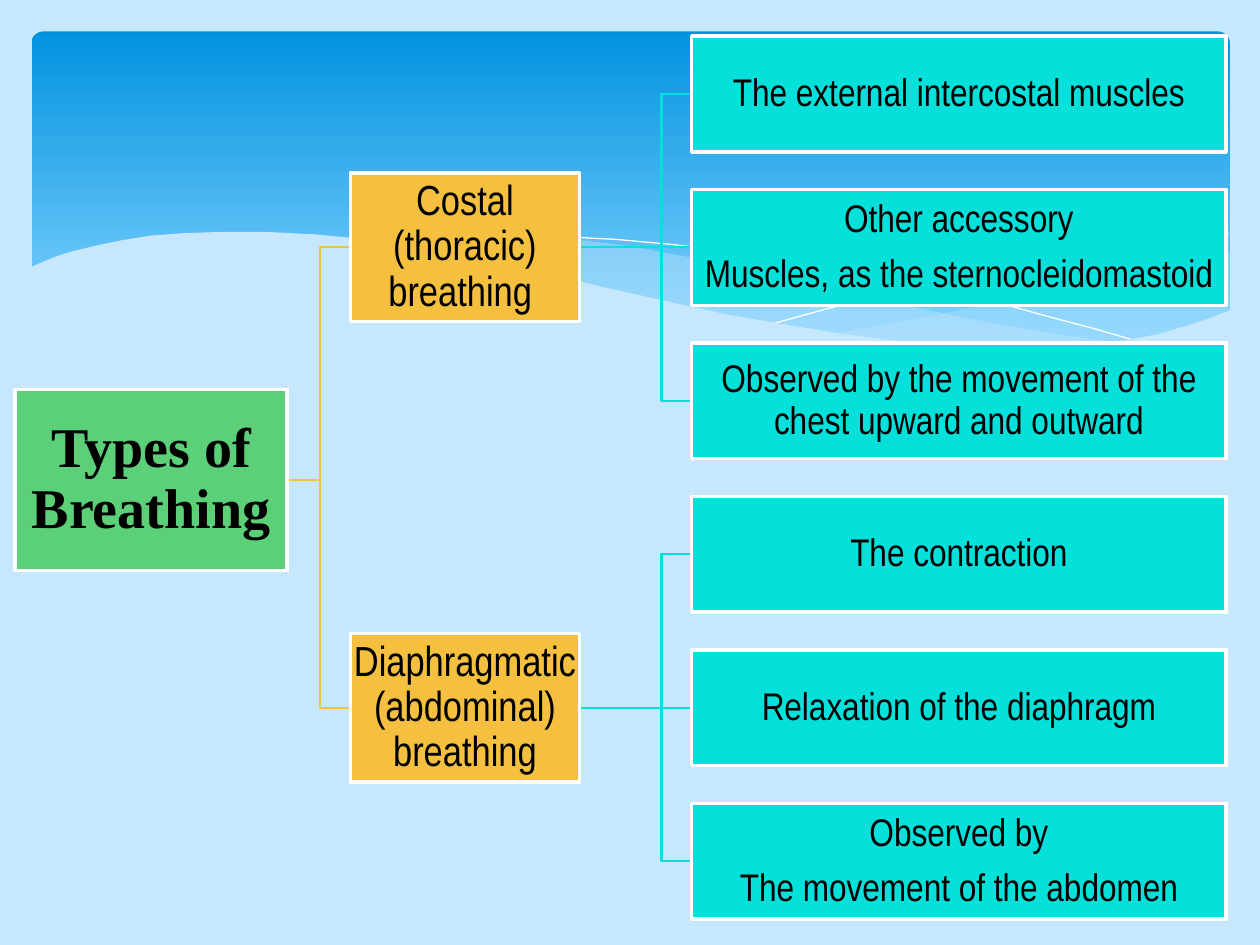
import pptx
import pptx.dml.color
import pptx.enum.dml
import pptx.enum.shapes
import pptx.enum.text
import pptx.oxml
import pptx.oxml.ns
import pptx.util
from pptx.util import Inches

COLORS = {
    "sky": "C6E7FC", "band_top": "0293E0", "band_bottom": "83D3FE",
    "root": "5BD078", "type": "F5C040", "detail": "05E0DB",
    "white": "FFFFFF", "text": "000000",
}

# Wave outlines, in hundredths of an inch
RIGHT_WAVE = [
    (975, 200), (948, 204), (921, 210), (891, 216), (861, 223), (805, 237),
    (753, 248), (706, 257), (661, 265), (691, 269), (719, 272), (745, 275),
    (769, 277), (792, 277), (814, 278), (835, 277), (854, 276), (872, 274),
    (889, 272), (905, 269), (921, 265), (935, 262), (949, 257), (963, 252),
    (976, 247), (976, 200),
]
MIDDLE_WAVE = [
    (893, 273), (866, 269), (837, 265), (807, 260), (775, 254), (741, 247),
    (706, 240), (668, 231), (629, 222), (598, 214), (569, 208), (541, 203),
    (514, 198), (489, 194), (465, 191), (442, 189), (420, 187), (399, 186),
    (380, 185), (361, 185), (344, 186), (328, 187), (313, 188), (286, 191),
    (323, 196), (362, 203), (404, 211), (449, 222), (491, 232), (530, 240),
    (566, 248), (601, 255), (634, 261), (665, 266), (695, 270), (722, 274),
    (748, 276), (773, 277), (796, 278), (818, 278), (838, 278), (857, 277),
    (876, 275), (893, 273),
]
LONG_CURVE = [
    (309, 195), (328, 192), (344, 190), (363, 189), (387, 187), (416, 187),
    (450, 188), (489, 190), (533, 194), (582, 200), (608, 204), (636, 208),
    (665, 213), (695, 219), (727, 226), (760, 233), (795, 241), (831, 251),
    (869, 261), (907, 272),
]
SHORT_CURVE = [
    (613, 257), (653, 246), (695, 235), (748, 223), (776, 216), (806, 210),
    (836, 204), (866, 199), (895, 194), (924, 190), (951, 187), (975, 185),
]
FRONT_WAVE = [
    (977, 246), (959, 253), (940, 259), (920, 265), (899, 269), (875, 273),
    (850, 275), (823, 277), (809, 277), (778, 276), (744, 274), (708, 270),
    (668, 265), (626, 258), (579, 250), (529, 239), (475, 227), (447, 220),
    (418, 213), (391, 207), (365, 202), (340, 197), (316, 194), (292, 190),
    (271, 188), (250, 186), (230, 185), (211, 184), (177, 184), (146, 185),
    (119, 187), (95, 191), (76, 195), (59, 199), (46, 203), (36, 207),
    (29, 210), (23, 213), (23, 329), (977, 329),
]

ROOT_BOX = (0.12, 3.09, 2.16, 1.44)
TYPE_LEFT, TYPE_WIDTH, TYPE_HEIGHT = 2.78, 1.82, 1.18
DETAIL_LEFT, DETAIL_WIDTH, DETAIL_HEIGHT = 5.49, 4.24, 0.92
FIRST_DETAIL_MIDDLE, DETAIL_PITCH = 0.745, 1.218
TYPE_BEND, DETAIL_BEND = 2.54, 5.25

BREATHING_TYPES = [
    ("Costal (thoracic) breathing ", [
        ["The external intercostal muscles"],
        ["Other accessory", "Muscles, as the sternocleidomastoid"],
        ["Observed by the movement of the chest upward and outward"],
    ]),
    ("Diaphragmatic (abdominal) breathing", [
        ["The contraction"],
        ["Relaxation of the diaphragm"],
        ["Observed by", "The movement of the abdomen"],
    ]),
]


def rgb(name):
    return pptx.dml.color.RGBColor.from_string(COLORS[name])


def paint(fill, color, alpha=None):
    """Fill with a solid colour; alpha is the opacity in percent."""
    fill.solid()
    fill.fore_color.rgb = rgb(color)
    if alpha is not None:
        color_element = fill._xPr.find(".//" + pptx.oxml.ns.qn("a:srgbClr"))
        opacity = color_element.makeelement(
            pptx.oxml.ns.qn("a:alpha"), {"val": str(alpha * 1000)})
        color_element.append(opacity)


def draw_path(slide, points, closed):
    builder = slide.shapes.build_freeform(*points[0], scale=Inches(0.01))
    builder.add_line_segments(points[1:], close=closed)
    shape = builder.convert_to_shape()
    shape.shadow.inherit = False
    return shape


def add_wave(slide, points, alpha=None):
    shape = draw_path(slide, points, True)
    paint(shape.fill, "sky", alpha)
    shape.line.fill.background()


def add_curve(slide, points):
    shape = draw_path(slide, points, False)
    shape.fill.background()
    shape.line.color.rgb = rgb("white")
    shape.line.width = pptx.util.Pt(0)


def add_band(slide):
    shape = slide.shapes.add_shape(
        pptx.enum.shapes.MSO_SHAPE.ROUNDED_RECTANGLE,
        Inches(0.25), Inches(0.25), Inches(9.51), Inches(2.7))
    shape.adjustments[0] = 0.034
    shape.shadow.inherit = False
    shape.line.fill.background()
    shape.fill.gradient()
    shape.fill.gradient_angle = 270
    stops = zip(shape.fill.gradient_stops,
                [(0, "band_top"), (0.9, "band_bottom")])
    for stop, (position, color) in stops:
        stop.position = position
        stop.color.rgb = rgb(color)


def add_branch(slide, start, end, bend, color):
    """Join two points, turning at the x position bend if they differ in height."""
    kinds = pptx.enum.shapes.MSO_CONNECTOR
    straight = abs(start[1] - end[1]) < 0.01
    connector = slide.shapes.add_connector(
        kinds.STRAIGHT if straight else kinds.ELBOW,
        *(Inches(value) for value in (*start, *end)))
    connector.line.color.rgb = rgb(color)
    connector.line.width = pptx.util.Pt(1.25)
    properties = connector._element.spPr
    if not straight:
        share = round((bend - start[0]) / (end[0] - start[0]) * 100000)
        guides = properties.find(".//" + pptx.oxml.ns.qn("a:avLst"))
        guides.append(guides.makeelement(
            pptx.oxml.ns.qn("a:gd"), {"name": "adj1", "fmla": f"val {share}"}))
    properties.append(properties.makeelement(pptx.oxml.ns.qn("a:effectLst"), {}))


def add_box(slide, box, lines, color, size, font="Arial Narrow", bold=False):
    shape = slide.shapes.add_shape(
        pptx.enum.shapes.MSO_SHAPE.RECTANGLE, *(Inches(value) for value in box))
    shape.shadow.inherit = False
    paint(shape.fill, color)
    shape.line.color.rgb = rgb("white")
    shape.line.width = pptx.util.Pt(2)
    frame = shape.text_frame
    frame.word_wrap = True
    frame.vertical_anchor = pptx.enum.text.MSO_ANCHOR.MIDDLE
    frame.margin_left = frame.margin_right = Inches(0.02)
    frame.margin_top = frame.margin_bottom = Inches(0.02)
    for index, line in enumerate(lines):
        paragraph = frame.add_paragraph() if index else frame.paragraphs[0]
        paragraph.alignment = pptx.enum.text.PP_ALIGN.CENTER
        paragraph.line_spacing = 0.9
        paragraph.space_after = pptx.util.Pt(0.35 * size)
        run = paragraph.add_run()
        run.text = line
        run.font.name = font
        run.font.size = pptx.util.Pt(size)
        run.font.bold = bold
        run.font.color.rgb = rgb("text")


def add_tree(slide):
    left, top, width, height = ROOT_BOX
    root_exit = (left + width, top + height / 2)
    for type_index, (name, details) in enumerate(BREATHING_TYPES):
        first = FIRST_DETAIL_MIDDLE + type_index * len(details) * DETAIL_PITCH
        middles = [first + index * DETAIL_PITCH for index in range(len(details))]
        center = sum(middles) / len(middles)
        add_branch(slide, root_exit, (TYPE_LEFT, center), TYPE_BEND, "type")
        for middle, lines in zip(middles, details):
            add_branch(slide, (TYPE_LEFT + TYPE_WIDTH, center),
                       (DETAIL_LEFT, middle), DETAIL_BEND, "detail")
            add_box(slide, (DETAIL_LEFT, middle - DETAIL_HEIGHT / 2,
                            DETAIL_WIDTH, DETAIL_HEIGHT), lines, "detail", 22)
        add_box(slide, (TYPE_LEFT, center - TYPE_HEIGHT / 2,
                        TYPE_WIDTH, TYPE_HEIGHT), [name], "type", 24)
    add_box(slide, ROOT_BOX, ["Types of Breathing"], "root", 32,
            "Times New Roman", True)


def main():
    presentation = pptx.Presentation()
    presentation.slide_width = Inches(10)
    presentation.slide_height = Inches(7.5)
    slide = presentation.slides.add_slide(presentation.slide_layouts[6])
    paint(slide.background.fill, "sky")
    add_band(slide)
    add_wave(slide, RIGHT_WAVE, 29)
    add_wave(slide, MIDDLE_WAVE, 40)
    add_curve(slide, LONG_CURVE)
    add_curve(slide, SHORT_CURVE)
    add_wave(slide, FRONT_WAVE)
    add_tree(slide)
    presentation.save("out.pptx")


if __name__ == "__main__":
    main()
